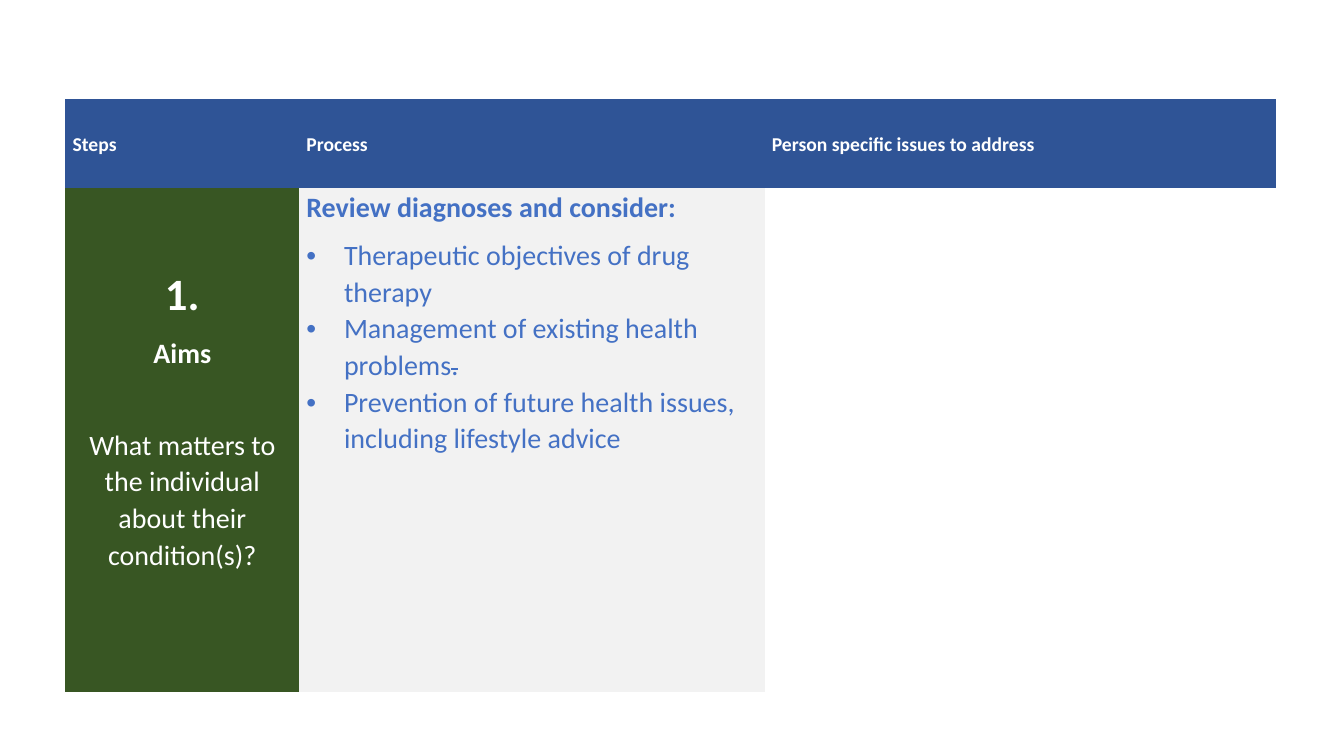
from lxml.etree import SubElement
from pptx import Presentation
from pptx.dml.color import RGBColor
from pptx.enum.text import MSO_ANCHOR, PP_ALIGN
from pptx.oxml.ns import qn
from pptx.util import Cm, Pt

COLORS = {
    "header": "2F5496",
    "step": "385623",
    "process": "F2F2F2",
    "blank": "FFFFFF",
    "light_text": "FFFFFF",
    "process_text": "4471C4",
}
FONT = "Calibri"
NO_GRID_STYLE = "{2D5ABB26-0587-4C30-8999-92F81FD0307C}"
COLUMN_WIDTHS = [5.89, 11.73, 12.88]
ROW_HEIGHTS = [2.26, 12.7]
BULLET_INDENT = Cm(0.95)

HEADINGS = ["Steps", "Process", "Person specific issues to address"]
# Text, size, bold, space after
STEP_LINES = [
    ("1.", 32, True, 8),
    ("Aims", 20, True, 39.5),
    ("What matters to the individual about their condition(s)?", 20, False, 8),
]
# Each consideration is a list of (text, struck through)
CONSIDERATIONS = [
    [("Therapeutic objectives of drug therapy", False)],
    [("Management of existing health problems", False), (".", True)],
    [("Prevention of future health issues, including lifestyle advice", False)],
]


def add_steps_table(slide):
    frame = slide.shapes.add_table(
        len(ROW_HEIGHTS), len(COLUMN_WIDTHS), Cm(1.65), Cm(2.49),
        Cm(sum(COLUMN_WIDTHS)), Cm(sum(ROW_HEIGHTS)))
    steps = frame.table
    steps.horz_banding = False
    steps._tbl.tblPr.find(qn("a:tableStyleId")).text = NO_GRID_STYLE
    for column, width in zip(steps.columns, COLUMN_WIDTHS):
        column.width = Cm(width)
    for row, height in zip(steps.rows, ROW_HEIGHTS):
        row.height = Cm(height)
    return steps


def style_cell(cell, fill, anchor=MSO_ANCHOR.MIDDLE):
    cell.fill.solid()
    cell.fill.fore_color.rgb = RGBColor.from_string(COLORS[fill])
    cell.vertical_anchor = anchor
    cell.margin_left = cell.margin_right = Cm(0.18)
    cell.margin_top = cell.margin_bottom = 0


def add_paragraph(cell, first, space_after=8, align=PP_ALIGN.LEFT):
    text = cell.text_frame
    paragraph = text.paragraphs[0] if first else text.add_paragraph()
    paragraph.alignment = align
    paragraph.line_spacing = 1.07
    paragraph.space_after = Pt(space_after)
    return paragraph


def add_run(paragraph, text, size, color, bold=False, struck=False):
    run = paragraph.add_run()
    run.text = text
    run.font.name = FONT
    run.font.size = Pt(size)
    run.font.bold = bold
    run.font.color.rgb = RGBColor.from_string(COLORS[color])
    if struck:
        run._r.get_or_add_rPr().set("strike", "sngStrike")


def add_bullet(paragraph):
    properties = paragraph._p.get_or_add_pPr()
    properties.set("marL", str(BULLET_INDENT))
    properties.set("indent", str(-BULLET_INDENT))
    SubElement(properties, qn("a:buFont"), typeface="Arial")
    SubElement(properties, qn("a:buChar"), char="•")


def fill_heading(cell, heading):
    style_cell(cell, "header")
    add_run(add_paragraph(cell, True), heading, 14, "light_text", bold=True)


def fill_step(cell):
    style_cell(cell, "step")
    cell.margin_bottom = Cm(1.11)
    for index, (text, size, bold, space_after) in enumerate(STEP_LINES):
        line = add_paragraph(cell, index == 0, space_after, PP_ALIGN.CENTER)
        add_run(line, text, size, "light_text", bold)


def fill_process(cell):
    style_cell(cell, "process", MSO_ANCHOR.TOP)
    lead = add_paragraph(cell, True)
    add_run(lead, "Review diagnoses and consider:", 20, "process_text", bold=True)
    for consideration in CONSIDERATIONS:
        item = add_paragraph(cell, False, space_after=0)
        add_bullet(item)
        for text, struck in consideration:
            add_run(item, text, 20, "process_text", struck=struck)


def main():
    deck = Presentation()
    deck.slide_width, deck.slide_height = Cm(33.87), Cm(19.05)
    slide = deck.slides.add_slide(deck.slide_layouts.get_by_name("Blank"))
    steps = add_steps_table(slide)

    # Header row
    for column, heading in enumerate(HEADINGS):
        fill_heading(steps.cell(0, column), heading)

    # First step
    fill_step(steps.cell(1, 0))
    fill_process(steps.cell(1, 1))
    style_cell(steps.cell(1, 2), "blank")

    deck.save("out.pptx")


if __name__ == "__main__":
    main()
